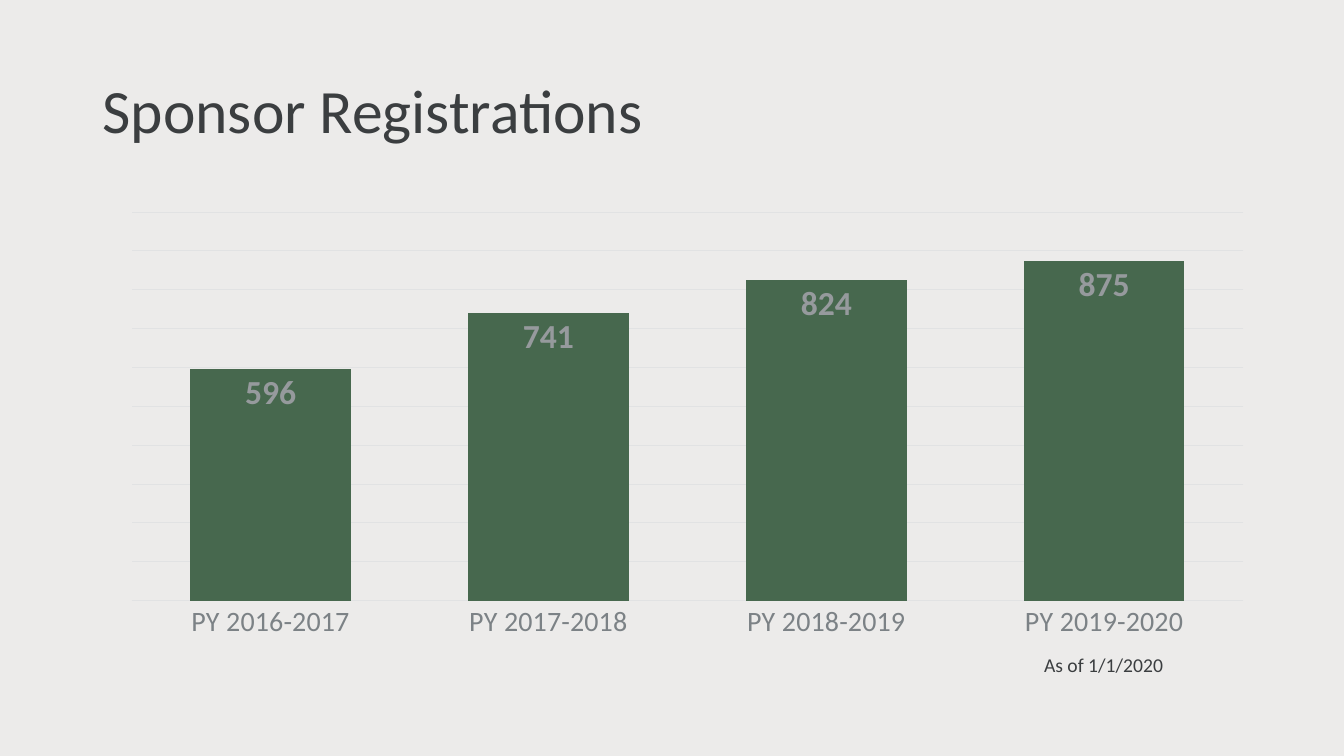
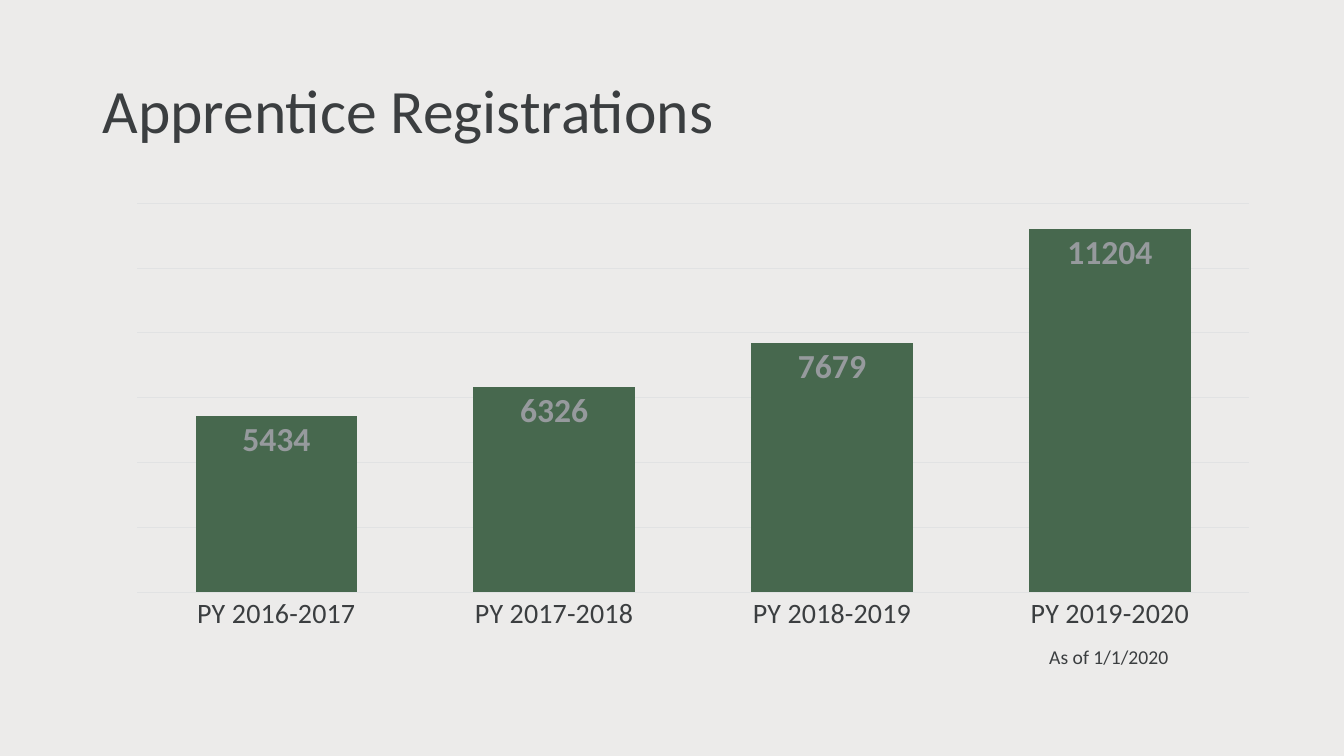
from dataclasses import dataclass

from lxml.etree import SubElement
from pptx import Presentation
from pptx.chart.data import CategoryChartData
from pptx.dml.color import RGBColor
from pptx.enum.chart import XL_CHART_TYPE, XL_LABEL_POSITION, XL_TICK_LABEL_POSITION, XL_TICK_MARK
from pptx.enum.text import MSO_ANCHOR, MSO_AUTO_SIZE, PP_ALIGN
from pptx.oxml.ns import qn
from pptx.util import Cm, Pt


@dataclass(frozen=True)
class Theme:
    font: str = "Calibri"
    background: str = "ECEBEA"
    text: str = "3B3E40"
    muted: str = "7C8286"
    grid: str = "E1E2E3"
    bar: str = "47684E"
    value_label: str = "969A9D"
    title_size: int = 44
    value_size: int = 24
    category_size: int = 20
    note_size: int = 14
    chart_size: int = 10
    line_width: float = 0.75


@dataclass(frozen=True)
class Box:
    """A region in centimetres."""
    left: float
    top: float
    width: float
    height: float

    def lengths(self):
        return [Cm(value) for value in (self.left, self.top, self.width, self.height)]


@dataclass(frozen=True)
class Registrations:
    """The content of one chart slide; plot_x and plot_y are shares of the chart."""
    title: str
    values: tuple
    axis_maximum: int
    axis_step: int
    chart_left: float
    chart_top: float
    plot_x: float
    plot_y: float
    gap_width: int
    category_color: str


THEME = Theme()
SLIDE_WIDTH, SLIDE_HEIGHT = 33.87, 19.05
TITLE_BOX = Box(2.33, 1.01, 29.21, 3.68)
CHART_WIDTH, CHART_HEIGHT = 28.8, 11.73
PLOT_WIDTH, PLOT_HEIGHT = 0.973, 0.836  # shares of the chart
NOTE_INDENT, NOTE_GAP = 22.4, 1.2       # from the plot's lower left corner
CATEGORIES = ("PY 2016-2017", "PY 2017-2018", "PY 2018-2019", "PY 2019-2020")
NOTE = "As of 1/1/2020"

SLIDES = (
    Registrations("Sponsor Registrations", (596, 741, 824, 875), 1000, 100,
                  2.54, 5.33, 0.027, 0, 73, THEME.muted),
    Registrations("Apprentice Registrations", (5434, 6326, 7679, 11204), 12000, 2000,
                  3.45, 4.7, 0, 0.036, 72, THEME.text),
)


def style_font(font, size, color, bold=False):
    font.name = THEME.font
    font.size = Pt(size)
    font.bold = bold
    font.color.rgb = RGBColor.from_string(color)


def style_line(line):
    line.color.rgb = RGBColor.from_string(THEME.grid)
    line.width = Pt(THEME.line_width)


def fill_title(slide, text, box):
    title = slide.shapes.title
    title.left, title.top, title.width, title.height = box.lengths()
    frame = title.text_frame
    frame.text = text
    frame.auto_size = MSO_AUTO_SIZE.NONE
    frame.vertical_anchor = MSO_ANCHOR.MIDDLE
    paragraph = frame.paragraphs[0]
    paragraph.alignment = PP_ALIGN.LEFT
    paragraph.line_spacing = 0.9
    style_font(paragraph.runs[0].font, THEME.title_size, THEME.text)


def set_plot_layout(chart, x, y):
    """Fix the inner plot area within the chart."""
    plot_area = chart.plots[0]._element.getparent()
    layout = plot_area.find(qn("c:layout"))
    if layout is None:
        layout = SubElement(plot_area, qn("c:layout"))
        plot_area.insert(0, layout)
    manual = SubElement(layout, qn("c:manualLayout"))
    settings = (("layoutTarget", "inner"), ("xMode", "edge"), ("yMode", "edge"),
                ("x", x), ("y", y), ("w", PLOT_WIDTH), ("h", PLOT_HEIGHT))
    for name, value in settings:
        SubElement(manual, qn(f"c:{name}")).set("val", str(value))


def add_column_chart(slide, content, box):
    data = CategoryChartData()
    data.categories = CATEGORIES
    data.add_series("Series 1", content.values)
    chart = slide.shapes.add_chart(XL_CHART_TYPE.COLUMN_CLUSTERED, *box.lengths(), data).chart
    chart.has_legend = False
    chart.has_title = False
    style_font(chart.font, THEME.chart_size, THEME.text)
    set_plot_layout(chart, content.plot_x, content.plot_y)

    # Axes
    category_axis = chart.category_axis
    category_axis.major_tick_mark = XL_TICK_MARK.NONE
    category_axis.tick_label_position = XL_TICK_LABEL_POSITION.NEXT_TO_AXIS
    style_font(category_axis.tick_labels.font, THEME.category_size, content.category_color)
    style_line(category_axis.format.line)
    value_axis = chart.value_axis
    value_axis.minimum_scale = 0
    value_axis.maximum_scale = content.axis_maximum
    value_axis.major_unit = content.axis_step
    value_axis.has_major_gridlines = True
    style_line(value_axis.major_gridlines.format.line)
    value_axis.visible = False

    # Columns and their values
    plot = chart.plots[0]
    plot.vary_by_categories = False
    plot.gap_width = content.gap_width
    series = plot.series[0]
    series.format.fill.solid()
    series.format.fill.fore_color.rgb = RGBColor.from_string(THEME.bar)
    labels = series.data_labels
    labels.show_value = True
    labels.position = XL_LABEL_POSITION.INSIDE_END
    style_font(labels.font, THEME.value_size, THEME.value_label, bold=True)


def add_note(slide, text, box):
    frame = slide.shapes.add_textbox(*box.lengths()).text_frame
    frame.word_wrap = True
    frame.auto_size = MSO_AUTO_SIZE.SHAPE_TO_FIT_TEXT
    frame.text = text
    paragraph = frame.paragraphs[0]
    paragraph.alignment = PP_ALIGN.CENTER
    style_font(paragraph.runs[0].font, THEME.note_size, THEME.text)


def add_chart_slide(presentation, content):
    slide = presentation.slides.add_slide(presentation.slide_layouts.get_by_name("Title Only"))
    fill_title(slide, content.title, TITLE_BOX)
    box = Box(content.chart_left, content.chart_top, CHART_WIDTH, CHART_HEIGHT)
    add_column_chart(slide, content, box)

    # Date note below the last column
    plot_left = box.left + content.plot_x * box.width
    plot_bottom = box.top + (content.plot_y + PLOT_HEIGHT) * box.height
    add_note(slide, NOTE, Box(plot_left + NOTE_INDENT, plot_bottom + NOTE_GAP, 4.19, 0.86))


def main():
    presentation = Presentation()
    presentation.slide_width = Cm(SLIDE_WIDTH)
    presentation.slide_height = Cm(SLIDE_HEIGHT)
    background = presentation.slide_master.background.fill
    background.solid()
    background.fore_color.rgb = RGBColor.from_string(THEME.background)
    for content in SLIDES:
        add_chart_slide(presentation, content)
    presentation.save("out.pptx")


if __name__ == "__main__":
    main()
